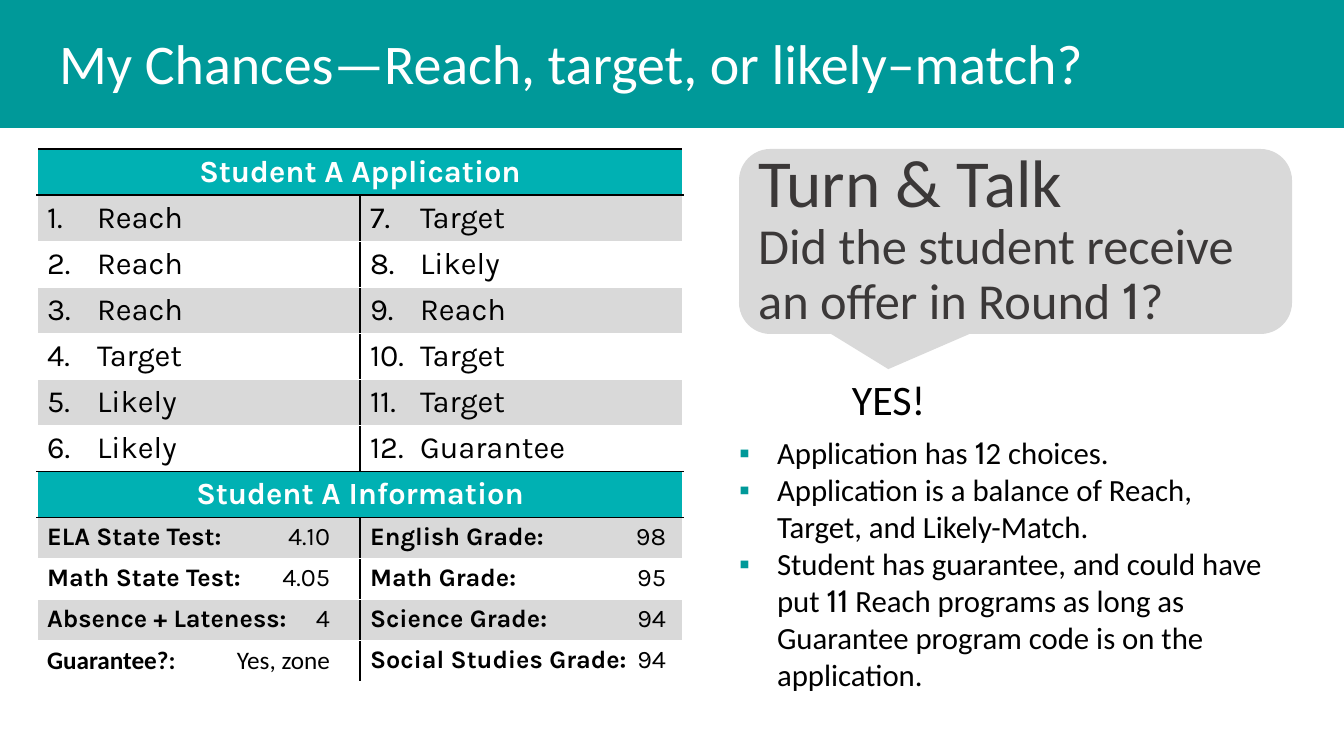
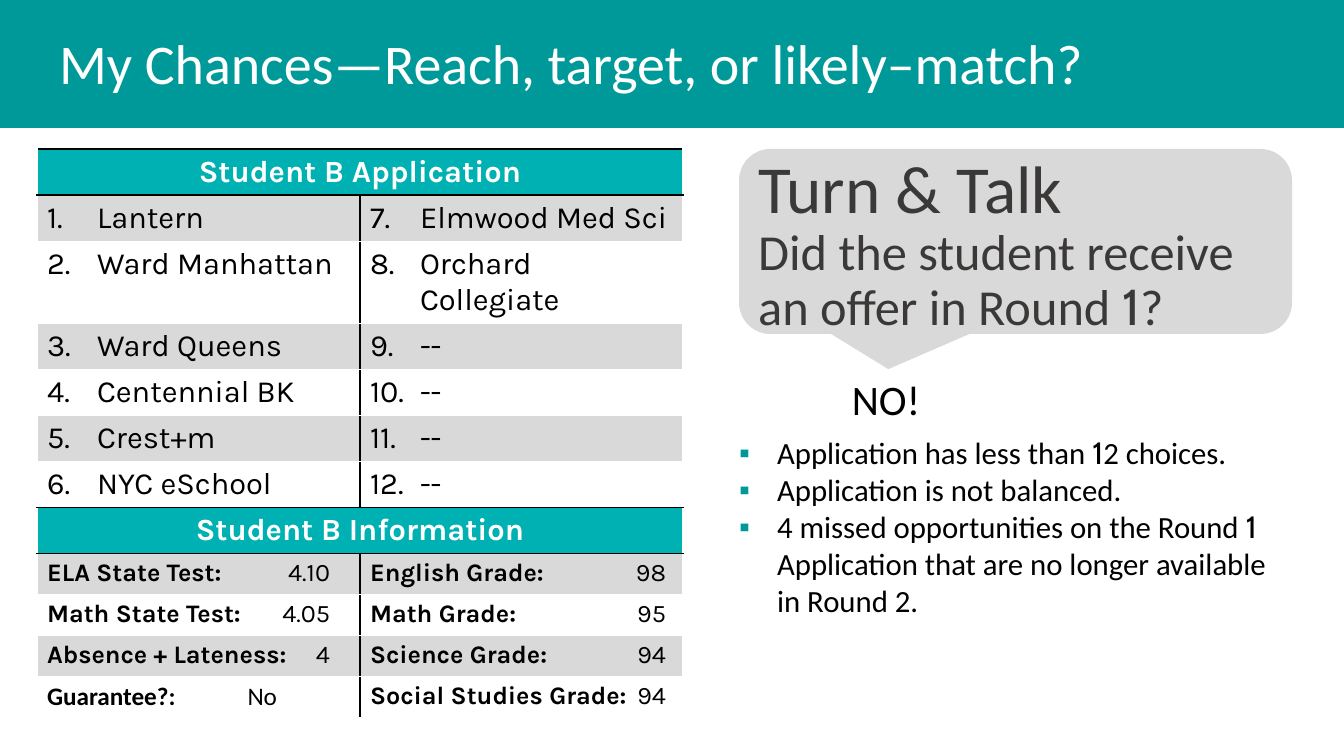
import itertools

import pptx
import pptx.dml.color
import pptx.enum.shapes
import pptx.enum.text
import pptx.oxml.ns
import pptx.util
from lxml import etree

RGBColor = pptx.dml.color.RGBColor
Pt = pptx.util.Pt
ALIGN = pptx.enum.text.PP_ALIGN
ANCHOR = pptx.enum.text.MSO_ANCHOR
SHAPE = pptx.enum.shapes.MSO_SHAPE
qn = pptx.oxml.ns.qn

BAND = RGBColor(0x00, 0x99, 0x99)
HEADER = RGBColor(0x00, 0xB1, 0xB3)
GREY = RGBColor(0xD9, 0xD9, 0xD9)
CHARCOAL = RGBColor(0x3B, 0x38, 0x38)
BLACK = RGBColor(0, 0, 0)
WHITE = RGBColor(255, 255, 255)

TITLE = "My Chances—Reach, target, or likely–match?"
PROMPT = "Turn & Talk"
QUESTION = "Did the student receive an offer in Round 1?"
GRADES = [("English Grade:", "98"), ("Math Grade:", "95"),
          ("Science Grade:", "94"), ("Social Studies Grade:", "94")]
SCORES = [("ELA State Test:", "4.10"), ("Math State Test:", "4.05"),
          ("Absence + Lateness:", "4")]

STUDENTS = [
    dict(
        name="Student A",
        choices=["Reach", "Reach", "Reach", "Target", "Likely", "Likely",
                 "Target", "Likely", "Reach", "Target", "Target", "Guarantee"],
        guarantee="Yes, zone", guarantee_tab=283,
        answer="YES!",
        reasons=["Application has 12 choices.",
                 "Application is a balance of Reach, Target, and Likely-Match.",
                 "Student has guarantee, and could have put 11 Reach programs "
                 "as long as Guarantee program code is on the application."],
        reasons_height=271, callout_bottom=17,
    ),
    dict(
        name="Student B",
        choices=["Lantern", "Ward Manhattan", "Ward Queens", "Centennial BK",
                 "Crest+m", "NYC eSchool", "Elmwood Med Sci",
                 "Orchard Collegiate", "--", "--", "--", "--"],
        guarantee="No", guarantee_tab=230,
        answer="NO!",
        reasons=["Application has less than 12 choices.",
                 "Application is not balanced.",
                 "4 missed opportunities on the Round 1 Application that are "
                 "no longer available in Round 2."],
        reasons_height=197, callout_bottom=5,
    ),
]

HEADER_ROWS = (0, 7)
ROW_HEIGHTS = [46] * 8 + [41] * 4
COLUMN = 323
SCORE_TAB, GRADE_TAB = 283, 296


def px(n):
    return round(n * 914400 / 100.8)


def place(sp, left, top, width, height):
    sp.left, sp.top, sp.width, sp.height = map(px, (left, top, width, height))


def add_run(p, text, size, color=BLACK, font="Calibri", bold=False):
    r = p.add_run()
    r.text = text
    r.font.size, r.font.name, r.font.bold = Pt(size), font, bold
    r.font.color.rgb = color


def add_prose(p, text, size, color=BLACK):
    """Add Calibri text in which each figure 1 is set in Cabin."""
    for is_one, chars in itertools.groupby(text, lambda c: c == "1"):
        add_run(p, "".join(chars), size, color, "Cabin" if is_one else "Calibri")


def add_child(parent, tag, **attrs):
    return etree.SubElement(parent, qn(tag), {k: str(v) for k, v in attrs.items()})


def hang(p, indent):
    pPr = p._p.get_or_add_pPr()
    pPr.set("marL", str(px(indent)))
    pPr.set("indent", str(-px(indent)))
    return pPr


def add_flat(s, kind, box, fill):
    sp = s.shapes.add_shape(kind, *map(px, box))
    sp.shadow.inherit = False
    sp.fill.solid()
    sp.fill.fore_color.rgb = fill
    sp.line.fill.background()
    return sp


def style_cell(cell, fill, borders):
    cell.fill.solid()
    cell.fill.fore_color.rgb = fill
    tcPr = cell._tc.get_or_add_tcPr()
    for i, (side, color) in enumerate(zip("LRTB", borders)):
        ln = add_child(tcPr, "a:ln" + side, w=12700)
        add_child(add_child(ln, "a:solidFill"), "a:srgbClr", val=color)
        tcPr.insert(i, ln)


def fill_choice(p, number, text):
    add_run(p, text, 22, font="Karla")
    add_child(hang(p, 50), "a:buAutoNum", type="arabicPeriod", startAt=number)


def fill_score(p, label, value, tab, font="Karla"):
    add_run(p, label + "\t", 18, font=font, bold=True)
    add_run(p, value, 18, font=font)
    tabs = add_child(p._p.get_or_add_pPr(), "a:tabLst")
    add_child(tabs, "a:tab", pos=px(tab), algn="r")


def add_table(s, student):
    frame = s.shapes.add_table(len(ROW_HEIGHTS), 2, px(37), px(149),
                               px(2 * COLUMN), px(sum(ROW_HEIGHTS)))
    table = frame.table
    table.first_row = table.horz_banding = False
    for col in table.columns:
        col.width = px(COLUMN)
    for row, height in zip(table.rows, ROW_HEIGHTS):
        row.height = px(height)

    for r, c in itertools.product(range(len(ROW_HEIGHTS)), range(2)):
        header = r in HEADER_ROWS
        middle = WHITE if header else BLACK
        top = BLACK if header or r - 1 in HEADER_ROWS else WHITE
        bottom = BLACK if header or r + 1 in HEADER_ROWS else WHITE
        start = max(h for h in HEADER_ROWS if h <= r)
        fill = HEADER if header else GREY if (r - start) % 2 else WHITE
        sides = (middle, WHITE) if c else (WHITE, middle)
        style_cell(table.cell(r, c), fill, (*sides, top, bottom))

    for r, part in zip(HEADER_ROWS, ("Application", "Information")):
        cell = table.cell(r, 0)
        cell.merge(table.cell(r, 1))
        p = cell.text_frame.paragraphs[0]
        p.alignment = ALIGN.CENTER
        add_run(p, f"{student['name']} {part}", 22, WHITE, "Karla", True)

    def paragraph(r, c):
        return table.cell(r, c).text_frame.paragraphs[0]

    for i, choice in enumerate(student["choices"]):
        c, r = divmod(i, 6)
        fill_choice(paragraph(HEADER_ROWS[0] + 1 + r, c), i + 1, choice)
    first = HEADER_ROWS[1] + 1
    for r, score in enumerate(SCORES, first):
        fill_score(paragraph(r, 0), *score, SCORE_TAB)
    fill_score(paragraph(first + len(SCORES), 0), "Guarantee?:",
               student["guarantee"], student["guarantee_tab"], "Calibri")
    for r, grade in enumerate(GRADES, first):
        fill_score(paragraph(r, 1), *grade, GRADE_TAB)


def add_callout(s, bottom_inset):
    sp = add_flat(s, SHAPE.ROUNDED_RECTANGULAR_CALLOUT, (739, 149, 553, 185), GREY)
    for i, value in enumerate((-0.23, 0.69, 0.17)):
        sp.adjustments[i] = value
    tf = sp.text_frame
    tf.word_wrap = True
    tf.vertical_anchor = ANCHOR.MIDDLE
    tf.margin_bottom = px(bottom_inset)
    p = tf.paragraphs[0]
    p.alignment = ALIGN.LEFT
    add_run(p, PROMPT, 48, CHARCOAL)
    p = tf.add_paragraph()
    p.alignment = ALIGN.LEFT
    p.line_spacing = 0.9
    add_prose(p, QUESTION, 36, CHARCOAL)


def add_title(s):
    band = add_flat(s, SHAPE.RECTANGLE, (0, 0, 1344, 128), BAND)
    s.shapes.element.insert(2, band.element)
    title = s.shapes.title
    place(title, 49, 11, 1280, 102)
    tf = title.text_frame
    tf.auto_size = pptx.enum.text.MSO_AUTO_SIZE.NONE
    tf.vertical_anchor = ANCHOR.MIDDLE
    p = tf.paragraphs[0]
    p.alignment = ALIGN.LEFT
    add_run(p, TITLE, 40, WHITE)


def add_reasons(s, reasons, height):
    body = s.placeholders[1]
    place(body, 729, 429, 564, height)
    tf = body.text_frame
    tf.auto_size = pptx.enum.text.MSO_AUTO_SIZE.NONE
    for i, reason in enumerate(reasons):
        p = tf.add_paragraph() if i else tf.paragraphs[0]
        p.space_before = Pt(0)
        add_prose(p, reason, 22)
        pPr = hang(p, 38)
        add_child(add_child(pPr, "a:buClr"), "a:srgbClr", val=BAND)
        add_child(pPr, "a:buChar", char="▪")


def add_answer(s, answer):
    tf = s.shapes.add_textbox(px(842), px(369), px(148), px(61)).text_frame
    tf.word_wrap = True
    add_run(tf.paragraphs[0], answer, 30)


def main():
    prs = pptx.Presentation()
    prs.slide_width, prs.slide_height = px(1344), px(756)
    for student in STUDENTS:
        s = prs.slides.add_slide(prs.slide_layouts[1])
        add_title(s)
        add_table(s, student)
        add_callout(s, student["callout_bottom"])
        add_reasons(s, student["reasons"], student["reasons_height"])
        add_answer(s, student["answer"])
    prs.save("out.pptx")


if __name__ == "__main__":
    main()
